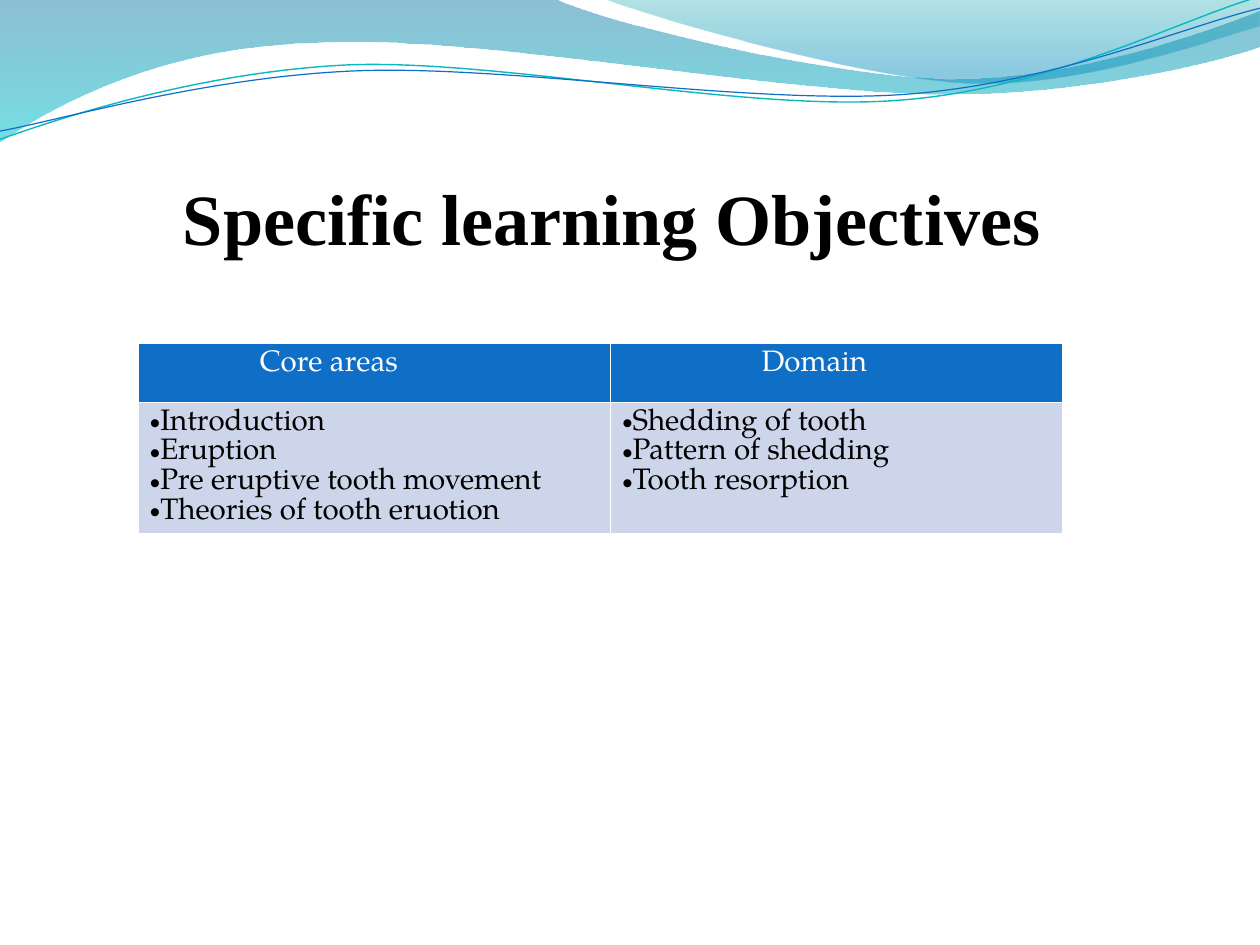
"""Build the learning objectives slide with its wave header and table."""
from lxml import etree
from pptx import Presentation
from pptx.dml.color import RGBColor
from pptx.enum.text import MSO_ANCHOR, MSO_AUTO_SIZE, PP_ALIGN
from pptx.oxml import parse_xml
from pptx.oxml.ns import nsdecls, qn
from pptx.util import Inches, Pt


def color(code):
    """Turn a hex string into a colour."""
    return RGBColor.from_string(code)


def draw(start, curves, close=False):
    """Draw cubic curves; a lone point stands for a straight side."""
    points = [(Inches(x), Inches(y)) for x, y in [start, *sum(curves, [])]]
    pen = slide.shapes.build_freeform(*points[0], scale=1)
    pen.add_line_segments(points[1:], close=close)
    shape = pen.convert_to_shape()
    shape.shadow.inherit = False
    sides = iter(list(shape._element.iter(qn("a:lnTo"))))
    for curve in curves:
        group = [next(sides) for _ in curve]
        if len(group) == 3:
            group[0].tag = qn("a:cubicBezTo")
            for side in group[1:]:
                group[0].append(side[0])
                side.getparent().remove(side)
    return shape


deck = Presentation()
deck.slide_width, deck.slide_height = Inches(10.67), Inches(8)
slide = deck.slides.add_slide(deck.slide_layouts[5])

bands = [
    ((0, 0), [
        [(4.7, -0.01)],
        [(5.07, 0.18), (7.08, 0.67), (8.09, 0.67)],
        [(9.1, 0.67), (10.22, 0.27), (10.67, 0.09)],
        [(10.68, 0.39)],
        [(10.49, 0.47), (9.28, 0.81), (7.96, 0.8)],
        [(6.63, 0.8), (4.07, 0.3), (2.74, 0.36)],
        [(1.38, 0.38), (0.49, 0.88), (-0.01, 1.21)],
    ], [(0, "0074A1", 45), (100, "00C6CF", 55)]),
    ((5.11, -0.01), [
        [(5.43, 0.12), (7.27, 0.66), (8.2, 0.7)],
        [(9.13, 0.74), (10.26, 0.34), (10.67, 0.22)],
        [(10.67, 0)],
    ], [(0, "00A1A9", 30), (80, "008BBF", 45)]),
]
for start, curves, stops in bands:
    band = draw(start, curves, True)
    band.line.fill.background()
    band.fill.gradient()
    band.fill.gradient_angle = 270
    grad = band._element.spPr.find(qn("a:gradFill"))
    items = grad.find(qn("a:gsLst"))
    for old in list(items):
        items.remove(old)
    for place, code, alpha in stops:
        items.append(parse_xml(
            f'<a:gs {nsdecls("a")} pos="{place * 1000}"><a:srgbClr val="{code}">'
            f'<a:alpha val="{alpha * 1000}"/></a:srgbClr></a:gs>'))

waves = [
    ((0, 1.18), [
        [(0.51, 1), (1.68, 0.61), (2.95, 0.55)],
        [(4.22, 0.5), (6.32, 0.95), (7.6, 0.85)],
        [(8.88, 0.76), (10.01, 0.16), (10.64, -0.02)],
    ], "0AB8BF", 0.85),
    ((0, 1.11), [
        [(0.5, 1.02), (1.75, 0.65), (3.02, 0.6)],
        [(4.29, 0.55), (6.37, 0.89), (7.65, 0.8)],
        [(8.92, 0.71), (10.04, 0.22), (10.67, 0.07)],
    ], "0F6FC6", 0.75),
]
for start, curves, code, width in waves:
    wave = draw(start, curves)
    wave.fill.background()
    wave.line.color.rgb = color(code)
    wave.line.width = Pt(width)

title = slide.shapes.title
title.left, title.top = Inches(1.34), Inches(1.41)
title.width, title.height = Inches(7.69), Inches(0.84)
frame = title.text_frame
frame.word_wrap = False
frame.auto_size = MSO_AUTO_SIZE.NONE
frame.vertical_anchor = MSO_ANCHOR.MIDDLE
para = frame.paragraphs[0]
para.alignment = PP_ALIGN.CENTER
run = para.add_run()
run.text = "Specific learning Objectives"
run.font.name, run.font.size, run.font.bold = "Times New Roman", Pt(44), True
run.font.color.rgb = color("000000")

goals = [
    ("Core areas", 4, 1.03, ["Introduction", "Eruption", "Pre eruptive tooth movement",
                             "Theories of tooth eruotion"]),
    ("Domain", 3.83, 1.28, ["Shedding of tooth", "Pattern of shedding", "Tooth resorption"]),
]
table = slide.shapes.add_table(2, 2, Inches(1.17), Inches(2.91), Inches(7.83), Inches(1.6)).table
table.rows[0].height, table.rows[1].height = Inches(0.5), Inches(1.1)
for col, (head, width, inset, topics) in enumerate(goals):
    table.columns[col].width = Inches(width)
    table.cell(0, col).margin_left = Inches(inset)
    for row, lines in enumerate([[head], topics]):
        cell = table.cell(row, col)
        cell.fill.solid()
        cell.fill.fore_color.rgb = color("CCD5EA" if row else "0F6FC6")
        for spot, side in enumerate("LRTB"):
            cell._tc.tcPr.insert(spot, parse_xml(
                f'<a:ln{side} {nsdecls("a")} w="12700"><a:solidFill>'
                f'<a:srgbClr val="FFFFFF"/></a:solidFill></a:ln{side}>'))
        for spot, line in enumerate(lines):
            text = cell.text_frame
            para = text.add_paragraph() if spot else text.paragraphs[0]
            if row:
                props = para._p.get_or_add_pPr()
                etree.SubElement(props, qn("a:buFont"), typeface="Arial")
                etree.SubElement(props, qn("a:buChar"), char="•")
            run = para.add_run()
            run.text = line
            run.font.name, run.font.size, run.font.bold = "TeX Gyre Pagella", Pt(18), False
            run.font.color.rgb = color("000000" if row else "FFFFFF")

deck.save("out.pptx")
